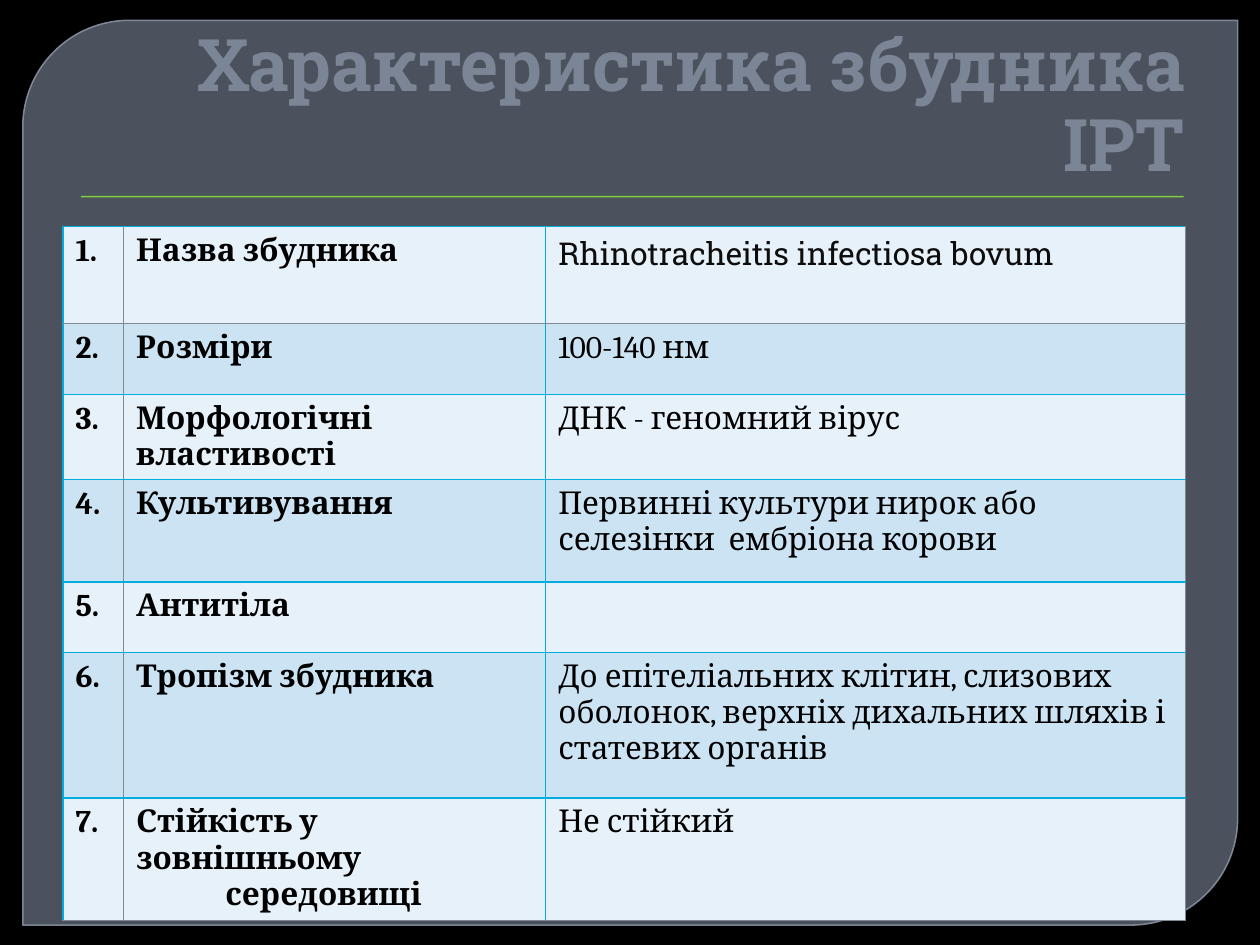
from dataclasses import dataclass

from lxml.etree import SubElement
from pptx import Presentation
from pptx.dml.color import RGBColor
from pptx.enum.shapes import MSO_SHAPE
from pptx.enum.text import MSO_ANCHOR, PP_ALIGN
from pptx.oxml import parse_xml
from pptx.oxml.ns import nsdecls, qn
from pptx.util import Cm, Pt


@dataclass(frozen=True)
class Theme:
    backdrop: str = "000000"
    panel: str = "767F8F"
    panel_edge: str = "8B94A4"
    rule: str = "7FD13B"
    title: str = "7B8596"
    ink: str = "000000"
    latin_ink: str = "0D0D0D"
    bands: tuple = ("E7F1F9", "CBE3F2")
    grid: tuple = ("00ADDC", 1)
    faint_grid: tuple = ("7F8A94", 0.5)
    title_font: str = "Roboto Slab"
    body_font: str = "Cambria"
    title_size: float = 41.4
    body_size: float = 18


def apply(target, values):
    for name, value in values.items():
        setattr(target, name, value)


class SlideBuilder:
    def __init__(self, deck, theme):
        self.theme = theme
        self.slide = deck.slides.add_slide(deck.slide_layouts[5])
        backdrop = self.slide.background.fill
        backdrop.solid()
        backdrop.fore_color.rgb = RGBColor.from_string(theme.backdrop)

    def font(self, font, color, **values):
        apply(font, values)
        font.color.rgb = RGBColor.from_string(color)

    def fade(self, fill, percent):
        color = fill._xPr.find(qn("a:solidFill"))[0]
        SubElement(color, qn("a:alpha"), val=str(percent * 1000))

    def block(self, preset, place, color, adjustments=()):
        block = self.slide.shapes.add_shape(preset, *map(Cm, place))
        block.shadow.inherit = False
        block.fill.solid()
        block.fill.fore_color.rgb = RGBColor.from_string(color)
        block.line.fill.background()
        for index, value in enumerate(adjustments):
            block.adjustments[index] = value
        return block

    def panel(self, place):
        panel = self.block(MSO_SHAPE.ROUND_2_DIAG_RECTANGLE, place,
                           self.theme.panel, (0.118, 0))
        self.fade(panel.fill, 65)
        panel.line.color.rgb = RGBColor.from_string(self.theme.panel_edge)
        panel.line.width = Pt(0.87)
        self.fade(panel.line.fill, 88)

    def title(self, text, place):
        title = self.slide.shapes.title
        self.slide.shapes._spTree.append(title._element)
        apply(title, dict(zip(("left", "top", "width", "height"), map(Cm, place))))
        apply(title.text_frame, {
            "text": text, "word_wrap": True, "vertical_anchor": MSO_ANCHOR.BOTTOM,
            "margin_bottom": Cm(0.1),
        })
        heading = title.text_frame.paragraphs[0]
        apply(heading, {"alignment": PP_ALIGN.RIGHT, "line_spacing": 0.92})
        self.font(heading.runs[0].font, self.theme.title, bold=True,
                  name=self.theme.title_font, size=Pt(self.theme.title_size))

    def borders(self, cell, edges):
        properties = cell._tc.get_or_add_tcPr()
        for index, (side, (color, width)) in enumerate(edges.items()):
            properties.insert(index, parse_xml(
                f'<a:ln{side} {nsdecls("a")} w="{Pt(width)}"><a:solidFill>'
                f'<a:srgbClr val="{color}"/></a:solidFill></a:ln{side}>'))

    def table(self, place, widths, heights, rows):
        theme = self.theme
        table = self.slide.shapes.add_table(
            len(rows), len(widths), *map(Cm, place), Cm(sum(widths)), Cm(sum(heights))).table
        apply(table, {"first_row": False, "horz_banding": False})
        for column, width in zip(table.columns, widths):
            column.width = Cm(width)
        for row, height in zip(table.rows, heights):
            row.height = Cm(height)
        strong, faint = theme.grid, theme.faint_grid
        verticals = (strong, faint, strong, faint)
        horizontals = (strong, faint, *[strong] * (len(rows) - 2), faint)
        for r, texts in enumerate(rows):
            for c, text in enumerate(texts):
                cell = table.cell(r, c)
                cell.fill.solid()
                cell.fill.fore_color.rgb = RGBColor.from_string(theme.bands[r % 2])
                self.borders(cell, {"L": verticals[c], "R": verticals[c + 1],
                                    "T": horizontals[r], "B": horizontals[r + 1]})
                cell.text = text
                latin = (r, c) == (0, 2)
                for position, paragraph in enumerate(cell.text_frame.paragraphs):
                    if position:
                        paragraph._p.get_or_add_pPr().set("marL", str(Cm(1.8)))
                    for run in paragraph.runs:
                        self.font(run.font, theme.latin_ink if latin else theme.ink,
                                  name=theme.title_font if latin else theme.body_font,
                                  size=Pt(theme.body_size), bold=c < 2)


def main():
    deck = Presentation()
    apply(deck, {"slide_width": Cm(25.4), "slide_height": Cm(19.05)})
    theme = Theme()
    builder = SlideBuilder(deck, theme)
    builder.panel((0.46, 0.41, 24.49, 18.24))
    builder.block(MSO_SHAPE.RECTANGLE, (1.63, 3.95, 22.23, 0.03), theme.rule)
    builder.title("Характеристика збудника ІРТ", (1.27, 0.71, 22.86, 3.18))
    traits = (
        ("Назва збудника", "Rhinotracheitis infectiosa bovum"),
        ("Розміри", "100-140 нм"),
        ("Морфологічні властивості", "ДНК - геномний вірус"),
        ("Культивування", "Первинні культури нирок або селезінки  ембріона корови"),
        ("Антитіла", ""),
        ("Тропізм збудника", "До епітеліальних клітин, слизових оболонок, "
                             "верхніх дихальних шляхів і статевих органів"),
        ("Стійкість у зовнішньому\nсередовищі", "Не стійкий"),
    )
    numbered = [(f"{number}.", *trait) for number, trait in enumerate(traits, 1)]
    builder.table((1.27, 4.57), (1.22, 8.51, 12.9),
                  (1.95, 1.43, 1.71, 2.06, 1.42, 2.94, 2.44), numbered)
    deck.save("out.pptx")


if __name__ == "__main__":
    main()
